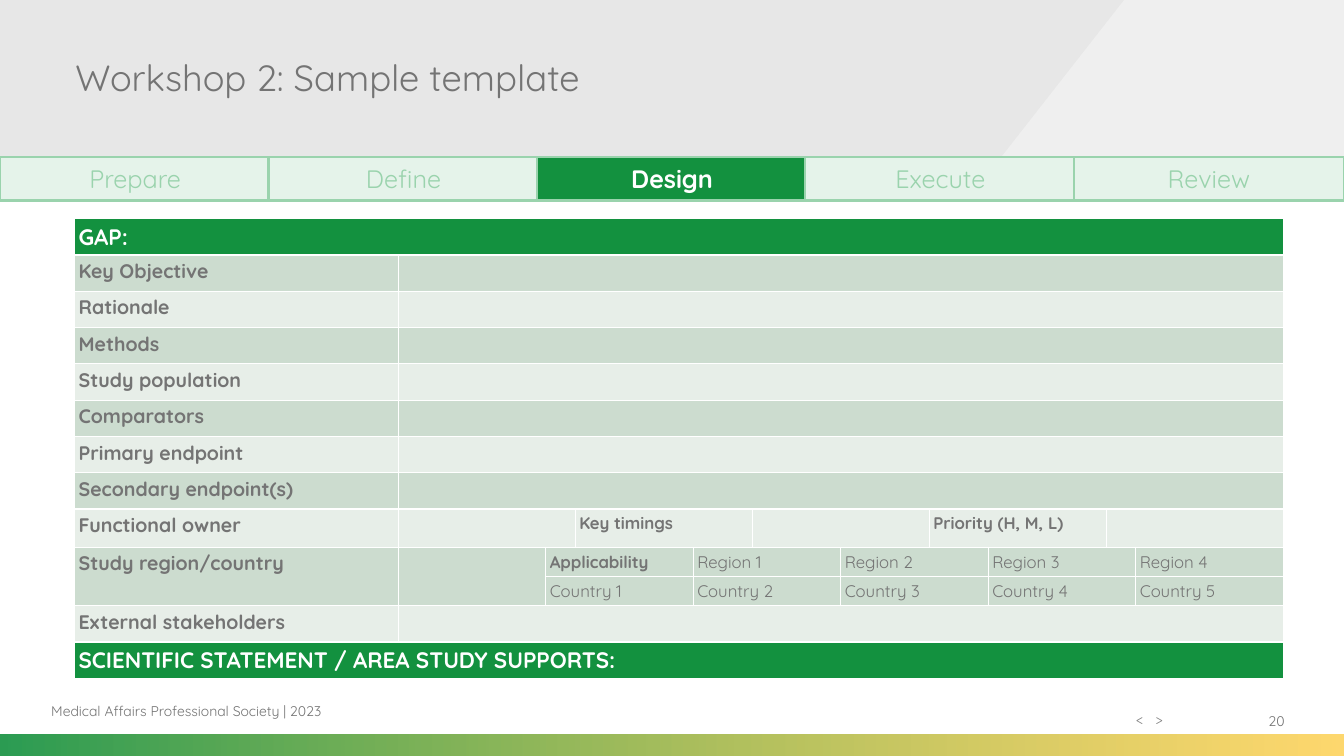
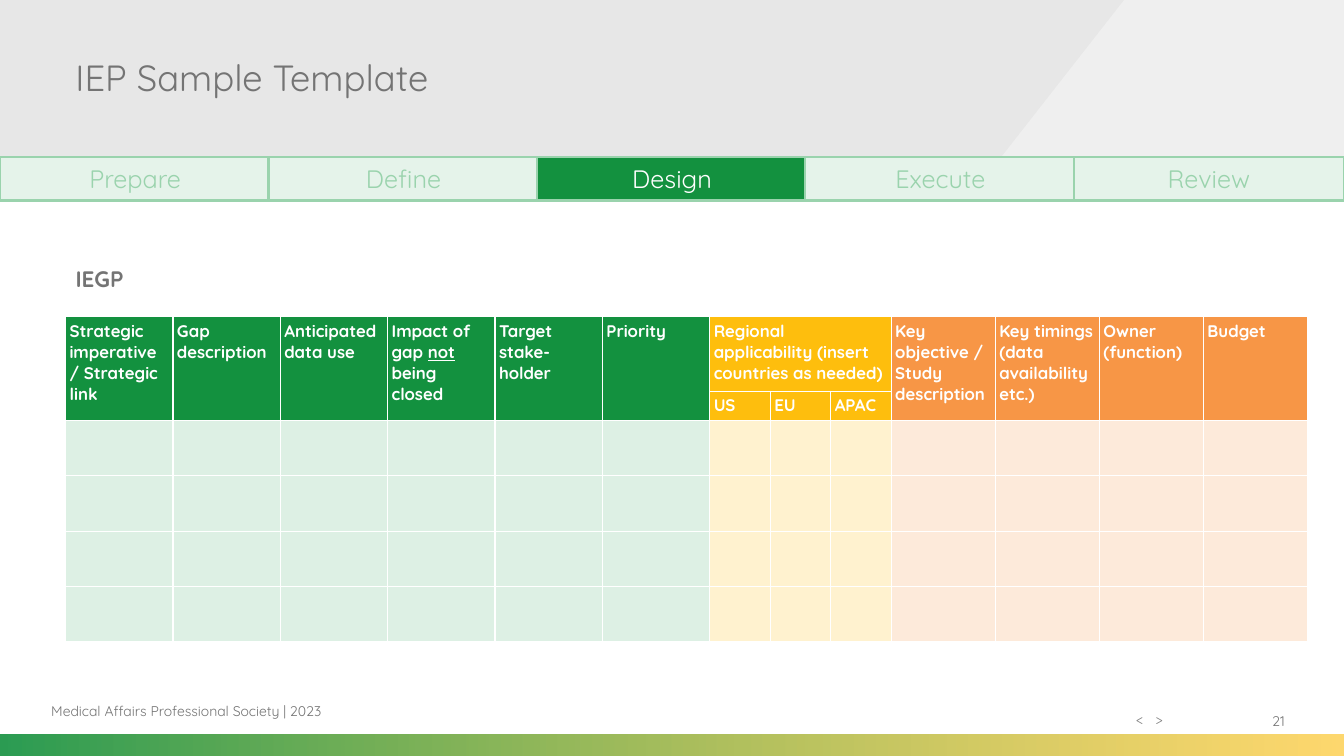
import pptx
import pptx.dml.color
import pptx.enum.shapes
import pptx.enum.text
import pptx.oxml.ns
import pptx.util
from lxml import etree
from pptx.util import Inches

FONT = "Quicksand"
WIDTH, HEIGHT = 13.33, 7.5
HEADER_HEIGHT = 1.56
COLORS = {
    "white": "FFFFFF",
    "text": "747474",
    "arrows": "808080",
    "header": "D9D9D9",
    "header_corner": "F2F2F2",
    "green": "13913F",
    "yellow": "FEBE0D",
    "orange": "F79646",
    "step_fill": "E5F3EA",
    "step_line": "9AD3AD",
    "row_dark": "CCDCCF",
    "row_light": "E7EEE8",
    "green_tint": "DDF0E4",
    "yellow_tint": "FFF2CF",
    "orange_tint": "FDEADA",
}
STEPS = ["Prepare", "Define", "Design", "Execute", "Review"]
ALIGN = pptx.enum.text.PP_ALIGN
ANCHOR = pptx.enum.text.MSO_ANCHOR
RECTANGLE = pptx.enum.shapes.MSO_SHAPE.RECTANGLE


def rgb(name):
    return pptx.dml.color.RGBColor.from_string(COLORS[name])


def sub_element(parent, tag, **attributes):
    return etree.SubElement(parent, pptx.oxml.ns.qn(tag), **attributes)


class Deck:
    """Holds the presentation, its style and the current slide."""

    def __init__(self):
        self.presentation = pptx.Presentation()
        self.presentation.slide_width = Inches(WIDTH)
        self.presentation.slide_height = Inches(HEIGHT)
        self.slide = None

    # Text
    def format_runs(self, paragraph, size, color, bold=False):
        for run in paragraph.runs:
            run.font.name = FONT
            run.font.size = pptx.util.Pt(size)
            run.font.bold = bold
            run.font.color.rgb = rgb(color)

    def text(self, text, left, top, width, height, size=10, color="text",
             align=ALIGN.LEFT, anchor=ANCHOR.MIDDLE):
        box = self.slide.shapes.add_textbox(
            Inches(left), Inches(top), Inches(width), Inches(height))
        frame = box.text_frame
        frame.word_wrap = True
        frame.vertical_anchor = anchor
        frame.text = text
        paragraph = frame.paragraphs[0]
        paragraph.alignment = align
        self.format_runs(paragraph, size, color)
        return paragraph

    # Shapes
    def rectangle(self, left, top, width, height, color):
        shape = self.slide.shapes.add_shape(
            RECTANGLE, Inches(left), Inches(top), Inches(width), Inches(height))
        return self.paint(shape, color)

    def polygon(self, points, color):
        points = [(Inches(x), Inches(y)) for x, y in points]
        builder = self.slide.shapes.build_freeform(*points[0])
        builder.add_line_segments(points[1:], close=True)
        return self.paint(builder.convert_to_shape(), color)

    def paint(self, shape, color):
        shape.shadow.inherit = False
        shape.fill.solid()
        shape.fill.fore_color.rgb = rgb(color)
        shape.line.fill.background()
        return shape

    def set_opacity(self, shape, *percents):
        fill_colors = shape.element.spPr.iter(pptx.oxml.ns.qn("a:srgbClr"))
        for fill_color, percent in zip(list(fill_colors), percents):
            sub_element(fill_color, "a:alpha", val=str(percent * 1000))

    def gradient_bar(self, left, top, width, height, colors, opacities):
        bar = self.rectangle(left, top, width, height, colors[0])
        bar.fill.gradient()
        bar.fill.gradient_angle = 0
        for stop, color in zip(bar.fill.gradient_stops, colors):
            stop.color.rgb = rgb(color)
        self.set_opacity(bar, *opacities)

    # Tables
    def table(self, left, top, widths, heights):
        frame = self.slide.shapes.add_table(
            len(heights), len(widths), Inches(left), Inches(top),
            Inches(sum(widths)), Inches(sum(heights)))
        table = frame.table
        table.first_row = table.horz_banding = False
        for column, width in zip(table.columns, widths):
            column.width = Inches(width)
        for row, height in zip(table.rows, heights):
            row.height = Inches(height)
        for cell in table.iter_cells():
            properties = cell._tc.get_or_add_tcPr()
            for side in "LRTB":
                line = sub_element(properties, "a:ln" + side, w="12700")
                solid = sub_element(line, "a:solidFill")
                sub_element(solid, "a:srgbClr", val=COLORS["white"])
            cell.fill.background()
            # Small end marks keep empty cells from stretching their row
            sub_element(cell.text_frame.paragraphs[0]._p, "a:endParaRPr", sz="1200")
        return table

    def cell(self, table, row, column, text="", fill=None, size=12,
             color="text", bold=True, span=(1, 1), margin=0.04):
        cell = table.cell(row, column)
        if span != (1, 1):
            cell.merge(table.cell(row + span[0] - 1, column + span[1] - 1))
        if fill:
            cell.fill.solid()
            cell.fill.fore_color.rgb = rgb(fill)
        cell.margin_left = cell.margin_right = Inches(margin)
        cell.margin_top = cell.margin_bottom = Inches(0.04)
        paragraph = cell.text_frame.paragraphs[0]
        # A tuple holds plain and underlined pieces in turn
        pieces = text if isinstance(text, tuple) else (text,)
        for index, piece in enumerate(pieces):
            if piece:
                run = paragraph.add_run()
                run.text = piece
                run.font.underline = index % 2 == 1
        self.format_runs(paragraph, size, color, bold)

    # Shared slide parts
    def add_slide(self, title, number, bold_step=False):
        layout = self.presentation.slide_layouts[6]
        self.slide = self.presentation.slides.add_slide(layout)
        band = self.rectangle(0, 0, WIDTH, HEADER_HEIGHT, "header")
        self.set_opacity(band, 62)
        corner = self.polygon(
            [(11.15, 0), (WIDTH, 0), (WIDTH, HEADER_HEIGHT), (9.93, HEADER_HEIGHT)],
            "header_corner")
        self.set_opacity(corner, 79)
        self.text(title, 0.65, 0, 10, 1.53, size=26)
        self.footer(number)
        self.steps("Design", bold_step)

    def footer(self, number):
        self.gradient_bar(0, 7.29, WIDTH, 0.21, ("green", "yellow"), (90, 60))
        self.text("Medical Affairs Professional Society | 2023", 0.41, 6.85, 4.22, 0.4)
        self.text(str(number), 11.93, 6.95, 0.91, 0.4, align=ALIGN.RIGHT)
        arrows = self.text("<\t>", 11.17, 7, 0.7, 0.27, color="arrows",
                           anchor=ANCHOR.TOP)
        tabs = sub_element(arrows._p.get_or_add_pPr(), "a:tabLst")
        sub_element(tabs, "a:tab", pos=str(Inches(0.19)), algn="l")

    def steps(self, current, bold):
        width = 2.68
        pitch = (WIDTH - width) / (len(STEPS) - 1)
        for index, step in enumerate(STEPS):
            active = step == current
            shape = self.rectangle(index * pitch, HEADER_HEIGHT, width, 0.43,
                                   "green" if active else "step_fill")
            shape.line.color.rgb = rgb("step_line")
            shape.line.width = pptx.util.Pt(1.5)
            frame = shape.text_frame
            frame.vertical_anchor = ANCHOR.MIDDLE
            frame.text = step
            frame.paragraphs[0].alignment = ALIGN.CENTER
            self.format_runs(frame.paragraphs[0], 18,
                             "white" if active else "step_line", active and bold)


def study_slide(deck):
    deck.add_slide("Workshop 2: Sample template", 20, bold_step=True)

    # The right part is divided into fifths in one row and sixths in others
    edges = sorted({i / 5 for i in range(6)} | {i / 6 for i in range(7)})
    widths = [3.21] + [8.78 * (b - a) for a, b in zip(edges, edges[1:])]
    heights = [0.36] * 8 + [0.38, 0.29, 0.29, 0.36, 0.36]
    table = deck.table(0.74, 2.17, widths, heights)

    banners = {0: "GAP:", 12: "SCIENTIFIC STATEMENT / AREA STUDY SUPPORTS:"}
    for row, text in banners.items():
        deck.cell(table, row, 0, text, "green", 16, "white", span=(1, 11))

    labels = {
        1: "Key Objective", 2: "Rationale", 3: "Methods", 4: "Study population",
        5: "Comparators", 6: "Primary endpoint", 7: "Secondary endpoint(s)",
        8: "Functional owner", 9: "Study region/country",
        11: "External stakeholders",
    }
    for index, (row, label) in enumerate(labels.items()):
        fill = "row_light" if index % 2 else "row_dark"
        deck.cell(table, row, 0, label, fill, 14, span=(2 if row == 9 else 1, 1))
        if row not in (8, 9):
            deck.cell(table, row, 1, fill=fill, span=(1, 10))

    # Owner, timings and priority
    for index, text in enumerate(["", "Key timings", "", "Priority (H, M, L)", ""]):
        deck.cell(table, 8, 1 + 2 * index, text, "row_light", span=(1, 2))

    # Regions and countries
    deck.cell(table, 9, 1, fill="row_dark", span=(2, 1))
    regions = ["Applicability"] + [f"Region {i}" for i in range(1, 5)]
    countries = [f"Country {i}" for i in range(1, 6)]
    for row, names in ((9, regions), (10, countries)):
        for index, name in enumerate(names):
            deck.cell(table, row, 2 + 2 * index, name, "row_dark",
                      bold=name == "Applicability",
                      span=(1, 1 if index == 4 else 2))


def evidence_plan_slide(deck):
    deck.add_slide("IEP Sample Template", 21)
    widths = [6.39 / 6] * 6 + [0.38, 0.22, 0.6, 0.6] + [4.13 / 4] * 4
    heights = [0.55, 0.74, 0.29] + [0.55] * 4
    table = deck.table(0.65, 2.59, widths, heights)
    deck.cell(table, 0, 0, "IEGP", size=16, margin=0.1)
    deck.cell(table, 0, 7, span=(1, 2))

    # Column headings
    headings = {
        0: "Strategic imperative / Strategic link",
        1: "Gap description",
        2: "Anticipated data use",
        3: ("Impact of gap ", "not", " being closed"),
        4: "Target stake-holder",
        5: "Priority",
        10: "Key objective / Study description",
        11: "Key timings (data availability etc.)",
        12: "Owner (function)",
        13: "Budget",
    }
    for column, heading in headings.items():
        deck.cell(table, 1, column, heading, "green" if column < 6 else "orange",
                  color="white", span=(2, 1))
    deck.cell(table, 1, 6, "Regional applicability (insert countries as needed)",
              "yellow", color="white", span=(1, 4))
    regions = {6: "US", 8: "EU", 9: "APAC"}
    for column, region in regions.items():
        deck.cell(table, 2, column, region, "yellow", color="white",
                  span=(1, 2 if column == 6 else 1))

    # Empty rows to fill in
    for row in range(3, 7):
        for column in sorted([*headings, *regions]):
            tint = ("green_tint" if column < 6 else
                    "yellow_tint" if column < 10 else "orange_tint")
            deck.cell(table, row, column, fill=tint,
                      span=(1, 2 if column == 6 else 1))


def main():
    deck = Deck()
    study_slide(deck)
    evidence_plan_slide(deck)
    deck.presentation.save("out.pptx")


if __name__ == "__main__":
    main()
